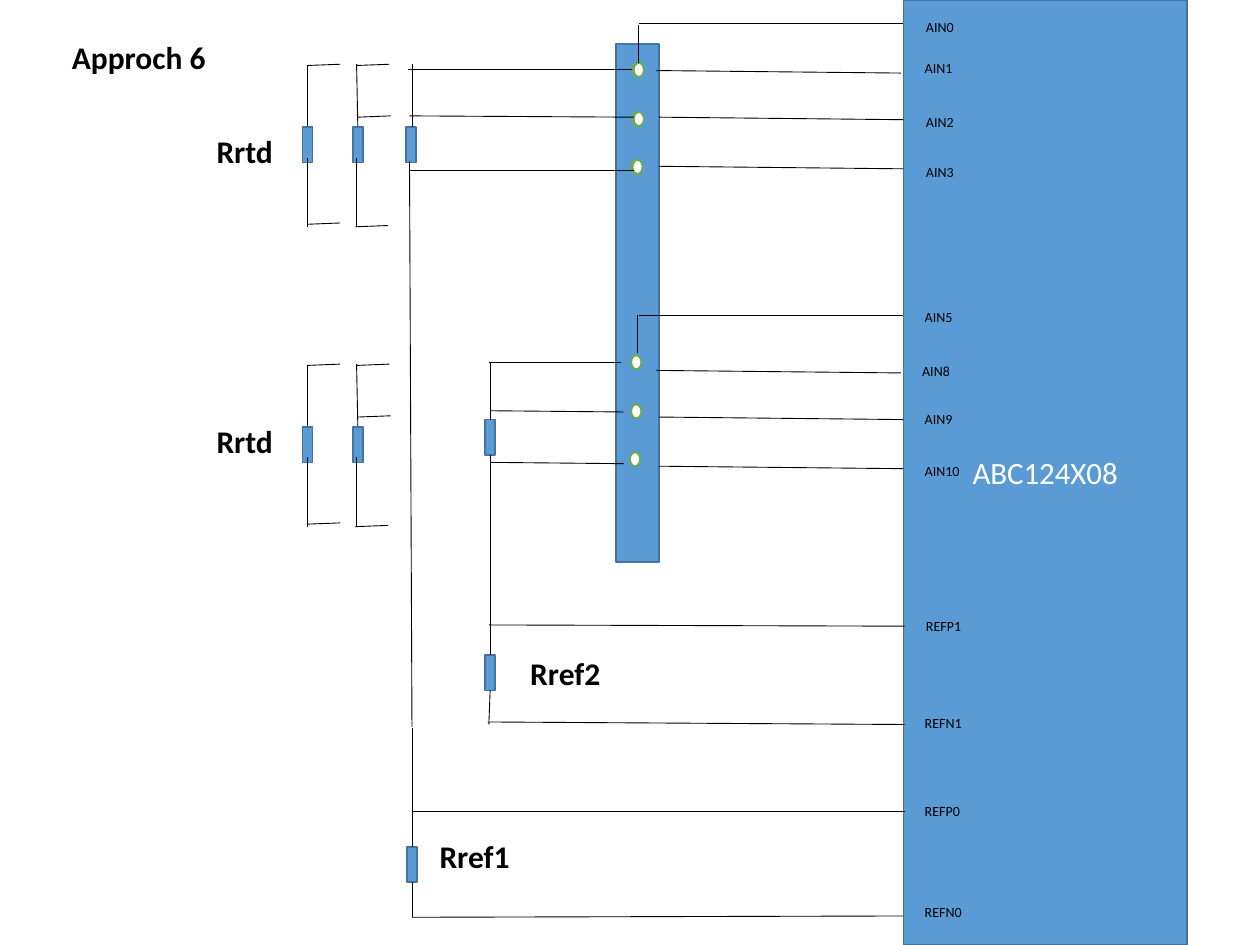
import pptx
import pptx.util
import pptx.dml.color
import pptx.enum.shapes
import pptx.enum.text
import lxml.etree
from dataclasses import dataclass

PX = 9144
SHAPE = pptx.enum.shapes.MSO_SHAPE
ANCHOR = pptx.enum.text.MSO_ANCHOR
ALIGN = pptx.enum.text.PP_ALIGN
AUTO = pptx.enum.text.MSO_AUTO_SIZE
A = "http://schemas.openxmlformats.org/drawingml/2006/main"


@dataclass(frozen=True)
class Theme:
    font: str = "Calibri"
    blue: str = "5B9BD5"
    edge: str = "43739E"
    green: str = "70AD47"
    white: str = "FFFFFF"
    black: str = "000000"
    heading: float = 18
    chip: float = 17.7
    pin: float = 8
    outline: float = 1
    wire: float = 0.5


T = Theme()


def rgb(value):
    return pptx.dml.color.RGBColor.from_string(value)


def emu(*lengths):
    return [pptx.util.Emu(n * PX) for n in lengths]


def write(sp, text, size, color=T.black, bold=False, align=ALIGN.LEFT, anchor=ANCHOR.TOP):
    tf = sp.text_frame
    tf.text = text
    tf.word_wrap = True
    tf.vertical_anchor = anchor
    p = tf.paragraphs[0]
    p.alignment = align
    r = p.runs[0]
    r.font.name = T.font
    r.font.size = pptx.util.Pt(size)
    r.font.bold = bold
    r.font.color.rgb = rgb(color)


def shape(s, kind, x, y, w, h, fill=T.blue, line=T.edge):
    sp = s.shapes.add_shape(kind, *emu(x, y, w, h))
    sp.shadow.inherit = False
    sp.fill.solid()
    sp.fill.fore_color.rgb = rgb(fill)
    sp.line.color.rgb = rgb(line)
    sp.line.width = pptx.util.Pt(T.outline)
    return sp


def resistor(s, x, y):
    shape(s, SHAPE.RECTANGLE, x, y, 8, 28)


def label(s, text, x, y, w, h, size=T.heading, bold=True):
    sp = s.shapes.add_textbox(*emu(x, y, w, h))
    write(sp, text, size, bold=bold)
    sp.text_frame.auto_size = AUTO.SHAPE_TO_FIT_TEXT


def wires(s, x, y, segments):
    for x1, y1, x2, y2 in segments:
        c = s.shapes.add_connector(
            pptx.enum.shapes.MSO_CONNECTOR.STRAIGHT,
            *emu(x + x1, y + y1, x + x2, y + y2))
        c.line.color.rgb = rgb(T.black)
        c.line.width = pptx.util.Pt(T.wire)
        lxml.etree.SubElement(c._element.spPr, f"{{{A}}}effectLst")


def title(s, x, y, w, h):
    sp = s.shapes.title
    sp.left, sp.top, sp.width, sp.height = emu(x, y, w, h)
    write(sp, "Approch 6", T.heading, bold=True)
    sp.text_frame.auto_size = AUTO.NONE


def chip(s, x, y, w, h):
    sp = shape(s, SHAPE.RECTANGLE, x, y, w, h)
    write(sp, "ABC124X08", T.chip, T.white, align=ALIGN.CENTER, anchor=ANCHOR.MIDDLE)
    pins = [("AIN0", 8, 10), ("AIN1", 7, 42), ("AIN2", 8, 85), ("AIN3", 8, 125),
            ("AIN5", 7, 240), ("AIN8", 5, 283), ("AIN9", 7, 321), ("AIN10", 7, 362),
            ("REFP1", 8, 485), ("REFN1", 7, 562), ("REFP0", 7, 632), ("REFN0", 7, 712)]
    for name, dx, dy in pins:
        label(s, name, x + dx, y + dy, 62, 23, T.pin, False)


def terminal_block(s, x, y, w, h):
    shape(s, SHAPE.RECTANGLE, x, y, w, h)
    for left, top in [(13, 15), (14, 15), (12, 247)]:
        for dx, dy in [(0, 0), (0, 39), (-1, 77)]:
            shape(s, SHAPE.OVAL, x + left + dx, y + top + dy, 8, 11, T.white, T.green)


def chip_links(s, x, y):
    wires(s, x, y, [(0, 0, 210, 0), (0, 1, 0, 31), (0, 231, 210, 231), (-1, 231, -1, 261)])
    for top in (37, 275):
        wires(s, x, y + top, [(14, 0, 208, 2), (16, 37, 210, 39), (16, 76, 210, 78)])


def rtd_bank(s, x, y):
    for dx in (40, 0):
        resistor(s, x + dx, y + 50)
    wires(s, x, y, [
        (44, 49, 43, 0), (42, 129, 68, 128), (43, 129, 43, 74),
        (43, 1, 69, 0), (44, 42, 70, 41),
        (4, 49, 4, 1), (4, 1, 30, 0), (4, 129, 4, 74), (4, 127, 30, 126)])
    label(s, "Rrtd", x - 78, y + (49 if y < 200 else 41), 78, 40)


def upper_loop(s, x, y):
    resistor(s, x, y + 50)
    resistor(s, x + 1, y + 621)
    wires(s, x, y, [
        (5, 50, 5, 0), (180, 4, 2, 4), (181, 42, 3, 41), (181, 84, 3, 84),
        (5, 526, 3, 77), (5, 621, 5, 527), (5, 649, 5, 677),
        (5, 593, 396, 593), (5, 677, 395, 676)])
    label(s, "Rref1", x + 17, y + 608, 84, 40)


def lower_loop(s, x, y):
    resistor(s, x, y + 46)
    resistor(s, x, y + 233)
    wires(s, x, y, [
        (4, 46, 4, 0), (108, 1, 3, 1), (110, 40, 4, 39), (110, 81, 4, 80),
        (4, 233, 4, 74), (3, 209, 333, 210),
        (4, 261, 3, 288), (2, 286, 333, 288)])
    label(s, "Rref2", x + 26, y + 227, 84, 40)


def main():
    prs = pptx.Presentation()
    prs.slide_width, prs.slide_height = emu(1000, 750)
    s = prs.slides.add_slide(prs.slide_layouts[5])
    title(s, 47, 25, 237, 40)
    chip(s, 717, 0, 225, 750)
    terminal_block(s, 489, 35, 34, 411)
    chip_links(s, 507, 19)
    upper_loop(s, 322, 51)
    lower_loop(s, 385, 287)
    for top in (51, 289):
        rtd_bank(s, 240, top)
    prs.save("out.pptx")


if __name__ == "__main__":
    main()
